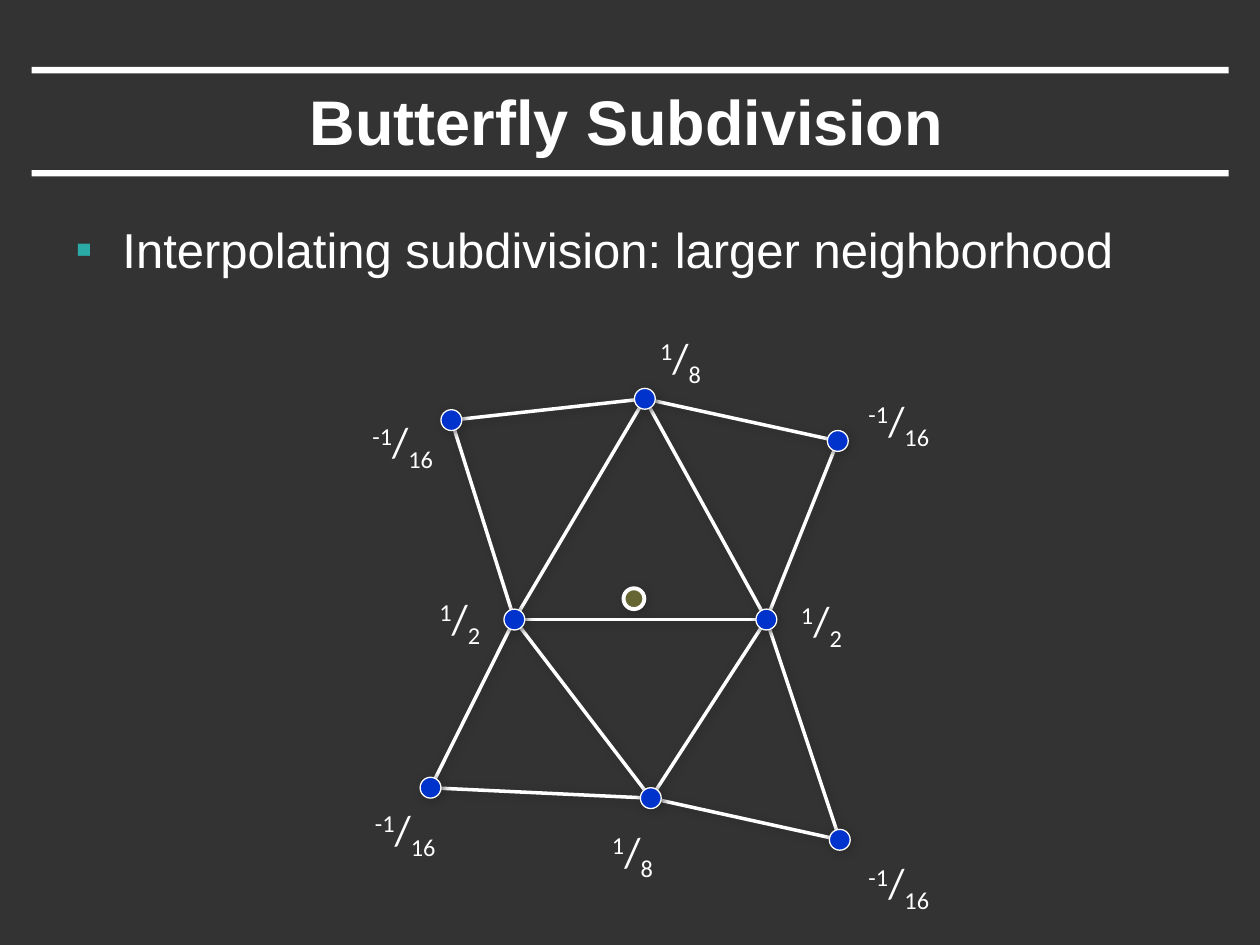
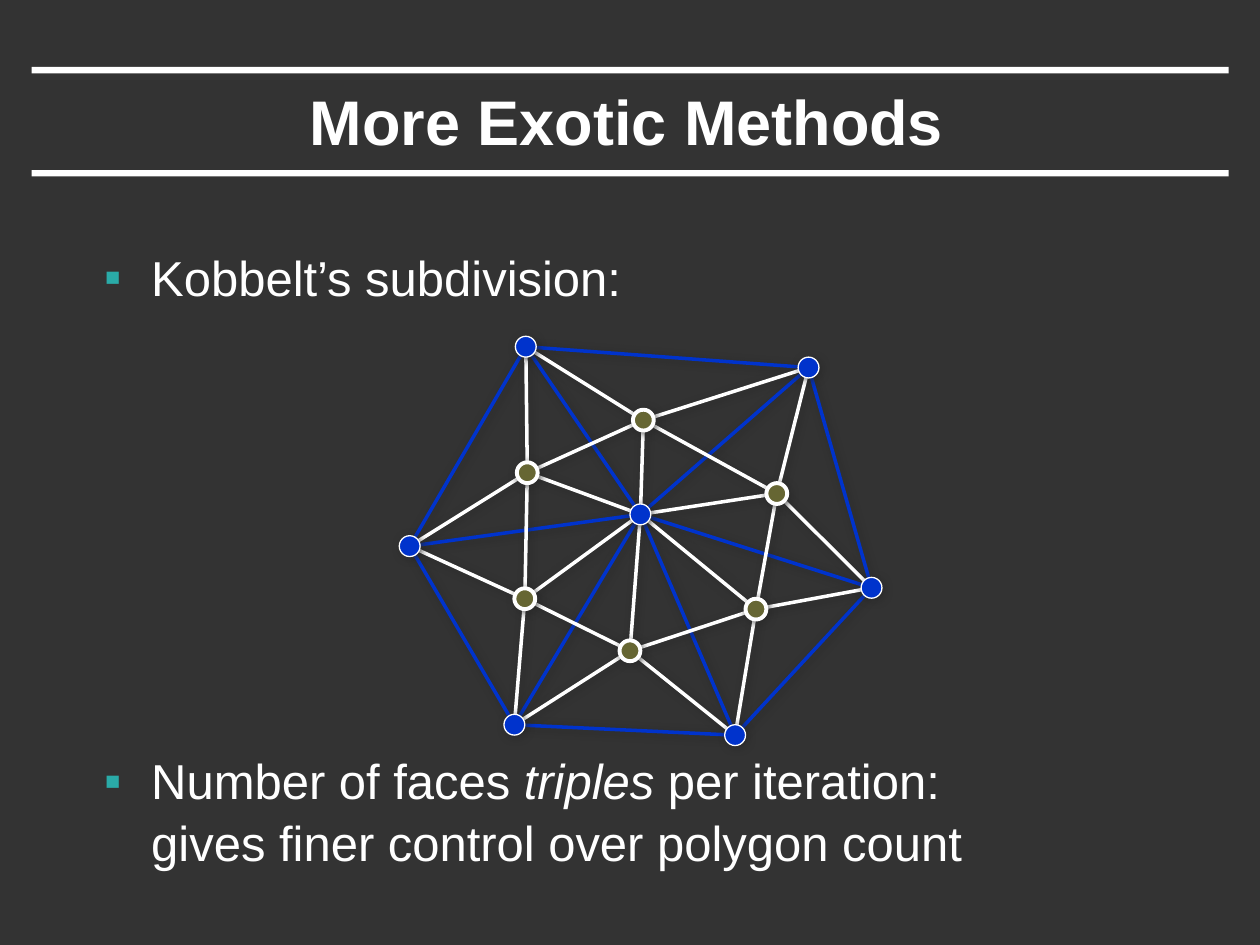
from lxml.etree import SubElement as Sub
from pptx import Presentation
from pptx.dml.color import RGBColor
from pptx.enum.shapes import MSO_CONNECTOR as Link, MSO_SHAPE as Kind
from pptx.enum.text import MSO_ANCHOR as Anchor, PP_ALIGN as Align
from pptx.oxml.ns import qn
from pptx.util import Cm, Pt

BACK, WHITE, BLUE = "333333", "FFFFFF", "0033CC"
OLIVE, TEAL, SHADE = "666633", "2AABA8", "292929"
DOT = 0.42

WINGS = {
    "title": "Butterfly Subdivision",
    "box": (1.27, 4.24, 22.86, 2.5),
    "items": [(0, [("Interpolating subdivision: larger neighborhood", False)])],
}
MID = (12.78, 12.07)
NODES = {
    "W": (10.37, 12.49), "E": (15.45, 12.49),
    "SW": (8.68, 15.88), "S": (13.12, 16.09), "SE": (16.93, 16.93),
    "NW": (9.1, 8.47), "N": (13, 8.04), "NE": (16.89, 8.89),
}
EDGES = ["SW S", "S SE", "SE E", "E NE", "NE N", "N NW", "NW W",
         "W SW", "W E", "W S", "S E", "N E", "N W"]
WEIGHTS = [
    ("1", "2", 16.56, 12.5), ("1", "2", 9.27, 12.45),
    ("-1", "16", 18.12, 8.46), ("-1", "16", 18.12, 17.78),
    ("-1", "16", 8.17, 16.71), ("-1", "16", 8.12, 8.89),
    ("1", "8", 13.72, 7.19), ("1", "8", 12.75, 17.15),
]

EXOTIC = {
    "title": "More Exotic Methods",
    "box": (1.85, 4.8, 21.59, 13.34),
    "items": [
        (0, [("Kobbelt’s subdivision:", False)]),
        (252.5, [("Number of faces ", False), ("triples", True),
                 (" per iteration:", False), ("\n", False),
                 ("gives finer control over polygon count", False)]),
    ],
}
HUB = (12.91, 10.37)
OUTER = [(10.6, 6.99), (16.3, 7.41), (17.57, 11.85),
         (14.82, 14.82), (10.37, 14.61), (8.26, 11.01)]
INNER = [(12.97, 8.47), (15.66, 9.95), (15.24, 12.28),
         (12.7, 13.12), (10.58, 12.07), (10.63, 9.53)]


def rgb(code):
    return RGBColor.from_string(code)


def style(font, size, name="Arial", bold=False):
    font.size, font.name, font.bold = Pt(size), name, bold
    font.color.rgb = rgb(WHITE)


def shade(shape):
    effects = Sub(shape._element.spPr, qn("a:effectLst"))
    cast = Sub(effects, qn("a:outerShdw"), blurRad=str(Pt(5)),
               dist=str(Pt(1.4)), dir="2700000", algn="ctr", rotWithShape="0")
    tint = Sub(cast, qn("a:srgbClr"), val=SHADE)
    Sub(tint, qn("a:alpha"), val="75000")


def edge(slide, start, end, color=WHITE):
    line = slide.shapes.add_connector(
        Link.STRAIGHT, *(Cm(n) for n in (*start, *end)))
    line.line.color.rgb = rgb(color)
    line.line.width = Pt(2)
    shade(line)


def dot(slide, spot, fill=BLUE, width=0.75):
    x, y = spot
    disc = slide.shapes.add_shape(
        Kind.OVAL, Cm(x - DOT / 2), Cm(y - DOT / 2), Cm(DOT), Cm(DOT))
    disc.fill.solid()
    disc.fill.fore_color.rgb = rgb(fill)
    disc.line.color.rgb = rgb(WHITE)
    disc.line.width = Pt(width)
    shade(disc)


def weight(slide, top, base, x, y):
    wide = 1.85 if len(base) > 1 else 1.37
    box = slide.shapes.add_textbox(
        Cm(x - wide / 2), Cm(y - 0.635), Cm(wide), Cm(1.27))
    box.text_frame.word_wrap = False
    para = box.text_frame.paragraphs[0]
    para.alignment = Align.CENTER
    style(para.font, 24, "Calibri")
    for text, lift in ((top, 30000), ("/", 0), (base, -25000)):
        run = para.add_run()
        run.text = text
        run.font._element.set("baseline", str(lift))


def bullet(para):
    props = para._p.get_or_add_pPr()
    props.set("marL", str(Cm(0.95)))
    props.set("indent", str(-Cm(0.95)))
    Sub(Sub(props, qn("a:buClr")), qn("a:srgbClr"), val=TEAL)
    Sub(props, qn("a:buFont"), typeface="Arial")
    Sub(props, qn("a:buChar"), char="▪")


def body(slide, place, items):
    frame = slide.shapes.add_textbox(*(Cm(n) for n in place)).text_frame
    frame.word_wrap = True
    for i, (gap, parts) in enumerate(items):
        para = frame.add_paragraph() if i else frame.paragraphs[0]
        para.line_spacing = 1.05
        para.space_before = Pt(gap)
        bullet(para)
        style(para.font, 28)
        for text, slant in parts:
            if text == "\n":
                para.add_line_break()
                continue
            run = para.add_run()
            run.text = text
            if slant:
                run.font.italic = True


def start(deck, page):
    slide = deck.slides.add_slide(deck.slide_layouts[5])
    for top in (1.35, 3.43):
        bar = slide.shapes.add_shape(
            Kind.RECTANGLE, Cm(0.64), Cm(top), Cm(24.13), Cm(0.13))
        bar.shadow.inherit = False
        bar.fill.solid()
        bar.fill.fore_color.rgb = rgb(WHITE)
        bar.line.fill.background()
    title = slide.shapes.title
    title.left, title.top = Cm(1.88), Cm(1.47)
    title.width, title.height = Cm(21.51), Cm(1.91)
    title.text_frame.text = page["title"]
    title.text_frame.vertical_anchor = Anchor.MIDDLE
    para = title.text_frame.paragraphs[0]
    para.alignment = Align.CENTER
    style(para.font, 36, bold=True)
    body(slide, page["box"], page["items"])
    return slide


def wings(deck):
    slide = start(deck, WINGS)
    dot(slide, MID, OLIVE, 2.25)
    for pair in EDGES:
        edge(slide, *(NODES[name] for name in pair.split()))
    for spot in NODES.values():
        dot(slide, spot)
    for label in WEIGHTS:
        weight(slide, *label)


def exotic(deck):
    slide = start(deck, EXOTIC)
    after = OUTER[1:] + OUTER[:1]
    for spot, end in zip(OUTER, after):
        edge(slide, spot, end, BLUE)
        edge(slide, spot, HUB, BLUE)
    for i, spot in enumerate(INNER):
        for end in (HUB, INNER[i - 1], OUTER[i], after[i]):
            edge(slide, spot, end)
    for spot in OUTER:
        dot(slide, spot)
    for spot in INNER:
        dot(slide, spot, OLIVE, 2.25)
    dot(slide, HUB)


def main():
    deck = Presentation()
    deck.slide_width, deck.slide_height = Cm(25.4), Cm(19.05)
    fill = deck.slide_master.background.fill
    fill.solid()
    fill.fore_color.rgb = rgb(BACK)
    wings(deck)
    exotic(deck)
    deck.save("out.pptx")


if __name__ == "__main__":
    main()
